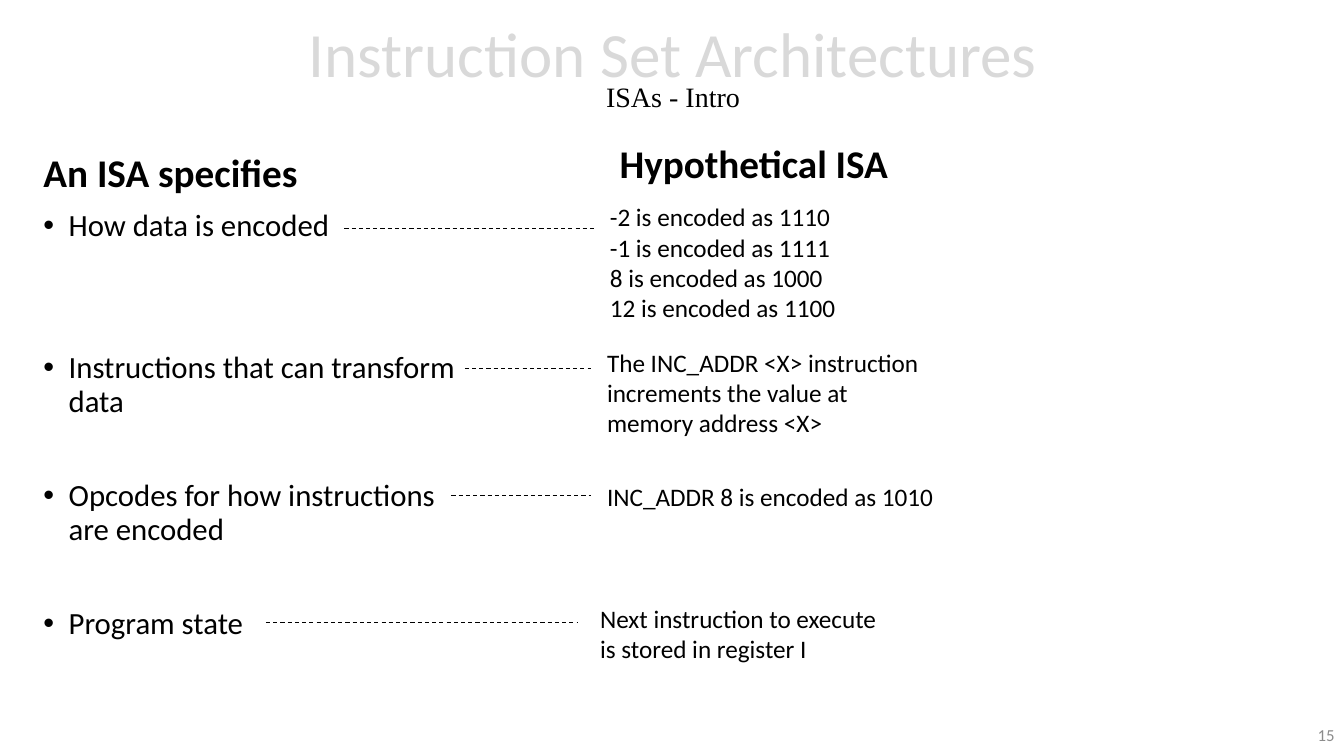
from lxml import etree
from pptx import Presentation
from pptx.dml.color import RGBColor
from pptx.enum import dml, shapes, text
from pptx.oxml import ns
from pptx.util import Pt

BLACK = "000000"

# Left, top, width, height and lines of each example
EXAMPLES = [
    (428.5, 140.5, 178, 94, ["-2 is encoded as 1110", "-1 is encoded as 1111",
                             "8 is encoded as 1000", "12 is encoded as 1100"]),
    (426.5, 244.5, 240, 73, ["The INC_ADDR <X> instruction",
                             "increments the value at", "memory address <X>"]),
    (426.5, 340, 250.5, 29, ["INC_ADDR 8 is encoded as 1010"]),
    (421.5, 427.5, 218, 51, ["Next instruction to execute",
                             "is stored in register I"]),
]

# Space before each bullet and its text
ASPECTS = [
    (10, "How data is encoded"),
    (77.5, "Instructions that can transform data"),
    (44, "Opcodes for how instructions are encoded"),
    (44, "Program state"),
]

# Start, end and height of each dashed link
LINKS = [(246, 426, 163.5), (332, 422, 263.5), (322.5, 422, 354), (190, 412.5, 445)]


def color(hex_string):
    return RGBColor.from_string(hex_string)


def format_font(font, size, hex_string=BLACK, bold=False, name="Calibri"):
    font.name, font.size, font.bold = name, Pt(size), bold
    font.color.rgb = color(hex_string)


def outline_text(run, hex_string):
    outline = etree.Element(ns.qn("a:ln"), w=str(Pt(1)))
    fill = etree.SubElement(outline, ns.qn("a:solidFill"))
    etree.SubElement(fill, ns.qn("a:srgbClr"), val=hex_string)
    run.font._element.insert(0, outline)


def add_title(slide, heading, subtitle):
    title = slide.shapes.title
    title.left, title.top, title.width, title.height = Pt(1.5), Pt(0.5), Pt(958.5), Pt(104.5)
    frame = title.text_frame
    frame.auto_size = text.MSO_AUTO_SIZE.NONE
    frame.vertical_anchor = text.MSO_ANCHOR.MIDDLE
    paragraph = frame.paragraphs[0]
    paragraph.alignment = text.PP_ALIGN.CENTER
    paragraph.line_spacing = 0.7
    heading_run = paragraph.add_run()
    heading_run.text = heading
    format_font(heading_run.font, 45, "D9D9D9")
    outline_text(heading_run, BLACK)
    paragraph.add_line_break()
    subtitle_run = paragraph.add_run()
    subtitle_run.text = subtitle
    format_font(subtitle_run.font, 20, name="Times New Roman")


def add_text(slide, left, top, width, height, lines, size=18, wrap=False, **style):
    box = slide.shapes.add_textbox(Pt(left), Pt(top), Pt(width), Pt(height))
    frame = box.text_frame
    frame.word_wrap = wrap
    if not wrap:
        frame.auto_size = text.MSO_AUTO_SIZE.SHAPE_TO_FIT_TEXT
    frame.text = "\n".join(lines)
    for paragraph in frame.paragraphs:
        format_font(paragraph.font, size, **style)
    return frame


def add_bullet(frame, space_before, words):
    paragraph = frame.add_paragraph()
    paragraph.text = words
    paragraph.line_spacing = 0.9
    paragraph.space_before = Pt(space_before)
    format_font(paragraph.font, 22)
    properties = paragraph._p.get_or_add_pPr()
    properties.set("marL", str(Pt(18)))
    properties.set("indent", str(Pt(-18)))
    bullet_font = etree.Element(ns.qn("a:buFont"), typeface="Arial")
    bullet = etree.Element(ns.qn("a:buChar"), char="•")
    properties.find(ns.qn("a:spcBef")).addnext(bullet_font)
    bullet_font.addnext(bullet)


def add_link(slide, start, end, height):
    link = slide.shapes.add_connector(
        shapes.MSO_CONNECTOR.STRAIGHT, Pt(start), Pt(height), Pt(end), Pt(height))
    link.line.color.rgb = color(BLACK)
    link.line.width = Pt(0.75)
    link.line.dash_style = dml.MSO_LINE.DASH
    etree.SubElement(link._element.spPr, ns.qn("a:effectLst"))


def main():
    presentation = Presentation()
    presentation.slide_width, presentation.slide_height = Pt(960), Pt(540)
    slide = presentation.slides.add_slide(presentation.slide_layouts[5])
    add_title(slide, "Instruction Set Architectures", "ISAs - Intro")

    # What an ISA specifies
    body = add_text(slide, 24, 106.5, 310, 414, ["An ISA specifies"], 28, wrap=True, bold=True)
    body.paragraphs[0].line_spacing = 0.9
    body.paragraphs[0].space_before = Pt(10)
    for space_before, words in ASPECTS:
        add_bullet(body, space_before, words)

    # Examples from a hypothetical ISA
    add_text(slide, 435.5, 96, 209, 41, ["Hypothetical ISA"], 28, bold=True)
    for example in EXAMPLES:
        add_text(slide, *example)

    # Links from aspects to examples
    for link in LINKS:
        add_link(slide, *link)

    # Slide number
    number = add_text(slide, 744.5, 510, 216, 29, ["15"], 12, wrap=True, hex_string="8C8C8C")
    number.vertical_anchor = text.MSO_ANCHOR.MIDDLE
    number.paragraphs[0].alignment = text.PP_ALIGN.RIGHT

    presentation.save("out.pptx")


if __name__ == "__main__":
    main()
